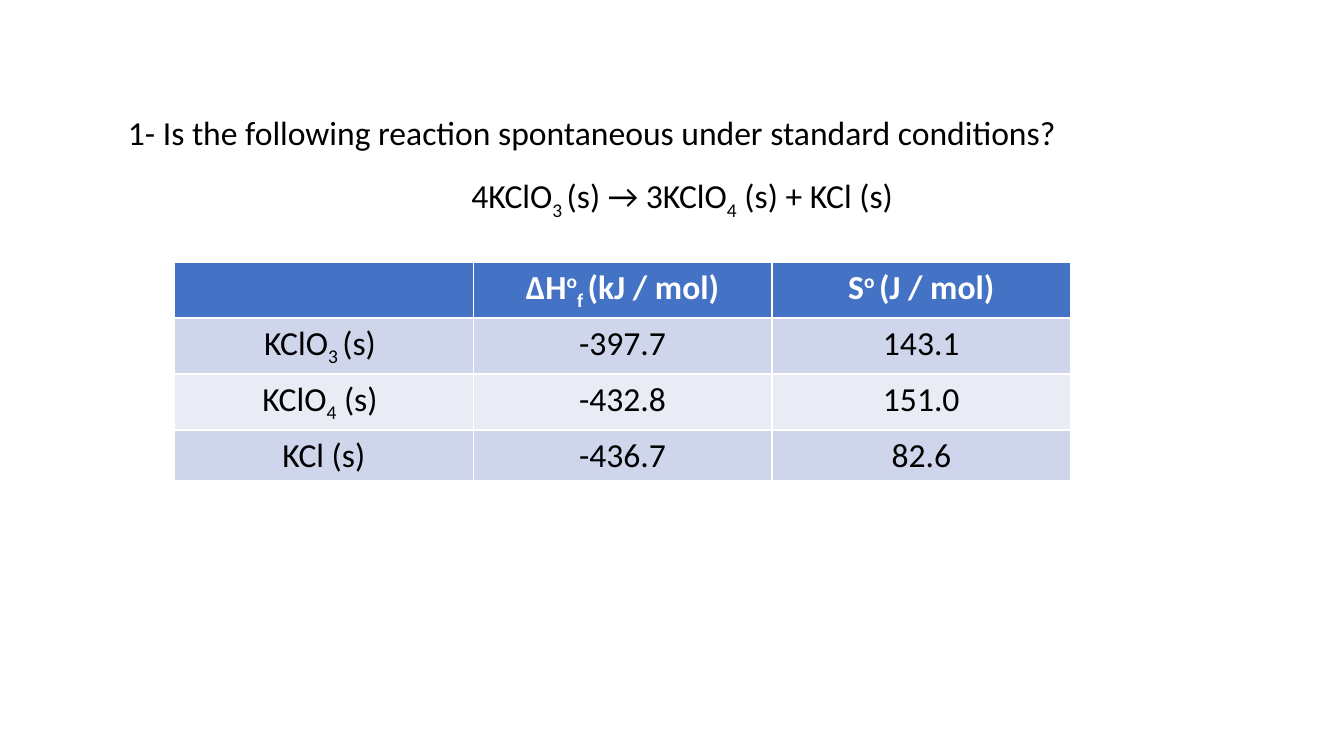
from pptx import Presentation
from pptx.dml.color import RGBColor
from pptx.enum.text import MSO_AUTO_SIZE, PP_ALIGN
from pptx.util import Inches, Pt

COLORS = {
    "ink": "000000",
    "paper": "FFFFFF",
    "head": "4472C4",
    "odd": "CFD5EA",
    "even": "E9EBF5",
}
SHIFTS = {"_": "-25000", "^": "30000"}

PROMPT = "1- Is the following reaction spontaneous under standard conditions?"
FORMULA = "4KClO|_3 |(s) → 3KClO|_4| (s) + KCl (s)"
ROWS = [
    ["", "∆H|^o|_f |(kJ / mol)", "S|^o |(J / mol)"],
    ["KClO|_3 |(s) ", "-397.7", "143.1"],
    ["KClO|_4| (s) ", "-432.8", "151.0"],
    ["KCl (s)", "-436.7", "82.6"],
]


def color(name):
    return RGBColor.from_string(COLORS[name])


def write(para, text, ink="ink", bold=False, align=PP_ALIGN.CENTER):
    """Split text at bars; a part led by _ or ^ is lowered or raised."""
    para.alignment = align
    for part in filter(None, text.split("|")):
        shift = SHIFTS.get(part[0])
        run = para.add_run()
        run.text = part[1:] if shift else part
        run.font.name = "Calibri"
        run.font.size = Pt(24)
        run.font.bold = bold
        run.font.color.rgb = color(ink)
        if shift:
            run.font._element.set("baseline", shift)


def add_question(slide, left, top, width, height):
    box = slide.shapes.add_textbox(
        Inches(left), Inches(top), Inches(width), Inches(height))
    frame = box.text_frame
    frame.word_wrap = True
    frame.auto_size = MSO_AUTO_SIZE.SHAPE_TO_FIT_TEXT
    prompt, formula = frame.paragraphs[0], frame.add_paragraph()
    write(prompt, PROMPT, align=PP_ALIGN.LEFT)
    write(formula, FORMULA)
    prompt.line_spacing = formula.line_spacing = 1.5


def add_data(slide, left, top, width, height):
    table = slide.shapes.add_table(
        len(ROWS), len(ROWS[0]), Inches(left), Inches(top),
        Inches(width), Inches(height)).table
    for i, row in enumerate(ROWS):
        head = i == 0
        fill = "head" if head else "odd" if i % 2 else "even"
        for j, text in enumerate(row):
            cell = table.cell(i, j)
            cell.fill.solid()
            cell.fill.fore_color.rgb = color(fill)
            write(cell.text_frame.paragraphs[0], text,
                  "paper" if head else "ink", head)


def main():
    deck = Presentation()
    deck.slide_width, deck.slide_height = Inches(13.33), Inches(7.5)
    slide = deck.slides.add_slide(deck.slide_layouts[6])
    add_question(slide, 1.17, 0.86, 11.19, 1.92)
    add_data(slide, 1.73, 2.6, 8.89, 1.64)
    deck.save("out.pptx")


if __name__ == "__main__":
    main()
